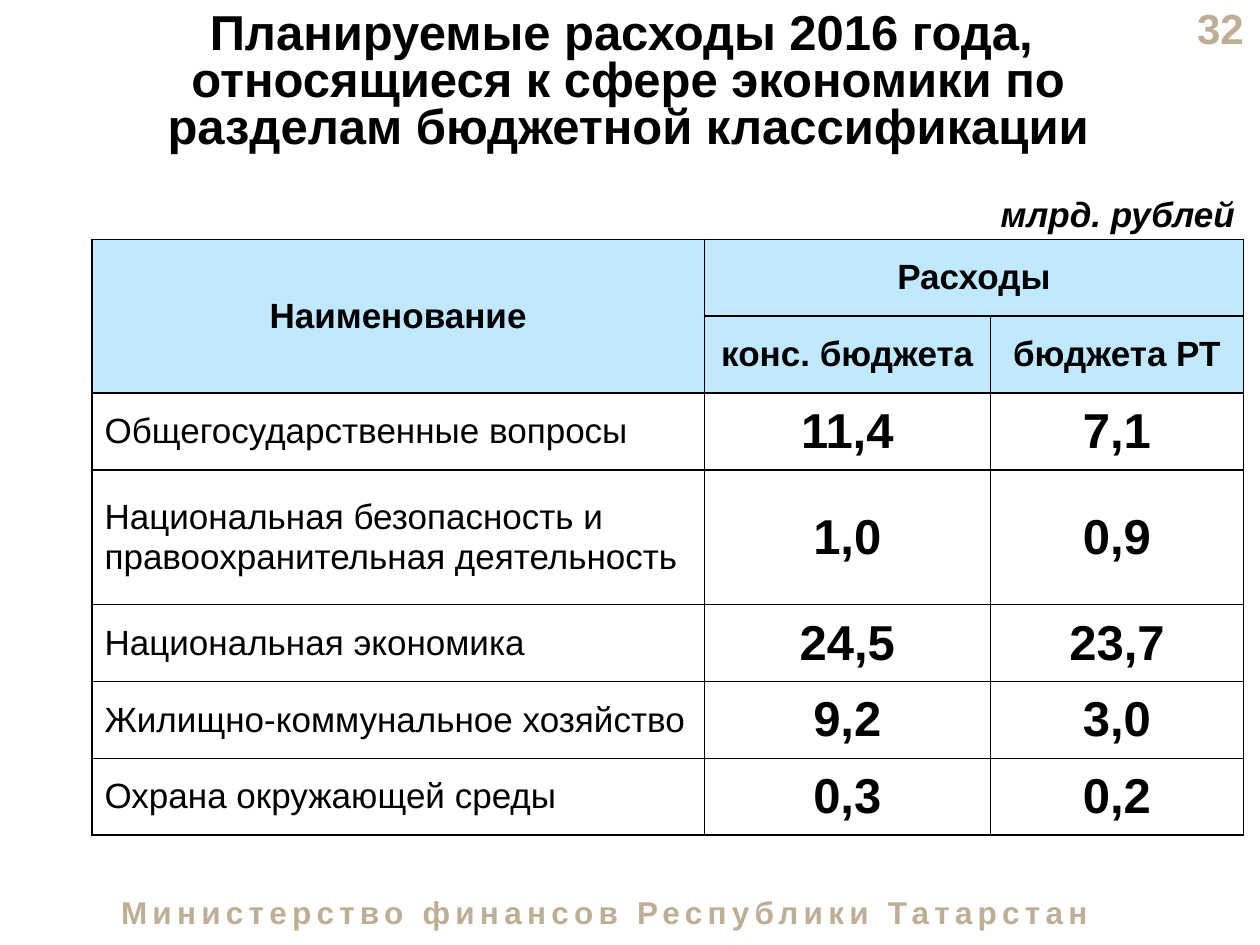
from lxml import etree
from pptx import Presentation
from pptx.dml.color import RGBColor
from pptx.enum.text import MSO_ANCHOR, PP_ALIGN
from pptx.oxml.ns import qn
from pptx.util import Inches, Pt

LEFT, CENTER, RIGHT = PP_ALIGN.LEFT, PP_ALIGN.CENTER, PP_ALIGN.RIGHT
TOP, MIDDLE = MSO_ANCHOR.TOP, MSO_ANCHOR.MIDDLE

BLACK, SAND, SKY = "000000", "BFAE96", "C0E9FF"
TITLE = ["Планируемые расходы 2016 года, ",
         "относящиеся к сфере экономики по разделам бюджетной классификации"]
PAGE_NUMBER = "32"
MINISTRY = "Министерство финансов Республики Татарстан"
UNITS = "млрд. рублей"
HEADER = [("Наименование", "Расходы", ""),
          ("", "конс. бюджета", "бюджета РТ")]
EXPENSES = [
    ("Общегосударственные вопросы", "11,4", "7,1"),
    ("Национальная безопасность и правоохранительная деятельность", "1,0", "0,9"),
    ("Национальная экономика", "24,5", "23,7"),
    ("Жилищно-коммунальное хозяйство", "9,2", "3,0"),
    ("Охрана окружающей среды", "0,3", "0,2"),
]
COLUMN_WIDTHS = [4.86, 2.27, 2.01]
ROW_HEIGHT, TALL_ROW_HEIGHT, TALL_ROW = 0.61, 1.07, 3


def rgb(value):
    return RGBColor.from_string(value)


def write(frame, lines, size, color=BLACK, bold=True, italic=False, align=CENTER, spacing=0):
    paragraph = frame.paragraphs[0]
    paragraph.alignment = align
    for index, line in enumerate(lines):
        if index:
            paragraph.add_line_break()
        run = paragraph.add_run()
        run.text = line
        font = run.font
        font.name, font.size, font.bold, font.italic = "Arial", Pt(size), bold, italic
        font.color.rgb = rgb(color)
        if spacing:
            run._r.get_or_add_rPr().set("spc", str(spacing * 100))
    return paragraph


def add_text(slide, place, lines, size, anchor=TOP, wrap=True, **style):
    frame = slide.shapes.add_textbox(*map(Inches, place)).text_frame
    frame.word_wrap = wrap
    frame.vertical_anchor = anchor
    return write(frame, lines, size, **style)


def add_borders(cell):
    properties = cell._tc.get_or_add_tcPr()
    for position, side in enumerate(("a:lnL", "a:lnR", "a:lnT", "a:lnB")):
        line = etree.Element(qn(side), w=str(Pt(1)))
        fill = etree.SubElement(line, qn("a:solidFill"))
        etree.SubElement(fill, qn("a:srgbClr"), val=BLACK)
        properties.insert(position, line)


def add_expense_table(slide):
    rows = HEADER + EXPENSES
    heights = [TALL_ROW_HEIGHT if r == TALL_ROW else ROW_HEIGHT for r in range(len(rows))]
    table = slide.shapes.add_table(
        len(rows), len(COLUMN_WIDTHS), Inches(0.73), Inches(1.9),
        Inches(sum(COLUMN_WIDTHS)), Inches(sum(heights))).table
    table.first_row = table.horz_banding = False
    for column, width in zip(table.columns, COLUMN_WIDTHS):
        column.width = Inches(width)
    for row, height in zip(table.rows, heights):
        row.height = Inches(height)
    table.cell(0, 0).merge(table.cell(1, 0))
    table.cell(0, 1).merge(table.cell(0, 2))

    for r, row in enumerate(rows):
        is_header = r < len(HEADER)
        for c, text in enumerate(row):
            cell = table.cell(r, c)
            cell.vertical_anchor = MIDDLE
            if is_header:
                cell.fill.solid()
                cell.fill.fore_color.rgb = rgb(SKY)
            else:
                cell.fill.background()
            add_borders(cell)
            is_name = not is_header and c == 0
            if text:
                write(cell.text_frame, [text], 20 if is_header or is_name else 28,
                      bold=not is_name, align=LEFT if is_name else CENTER)


def main():
    deck = Presentation()
    deck.slide_width, deck.slide_height = Inches(10), Inches(7.5)
    slide = deck.slides.add_slide(deck.slide_layouts[6])
    add_text(slide, (9.33, 0.05, 0.64, 0.34), [PAGE_NUMBER], 24,
             anchor=MIDDLE, color=SAND, align=RIGHT)
    add_text(slide, (0.56, 7.04, 8.48, 0.4), [MINISTRY], 18, color=SAND, spacing=3)
    title = add_text(slide, (0.56, 0.05, 8.85, 1.29), TITLE, 28)
    title.line_spacing = 0.8
    add_expense_table(slide)
    add_text(slide, (7.82, 1.48, 2.08, 0.44), [UNITS], 20,
             wrap=False, italic=True, align=RIGHT)
    deck.save("out.pptx")


if __name__ == "__main__":
    main()
